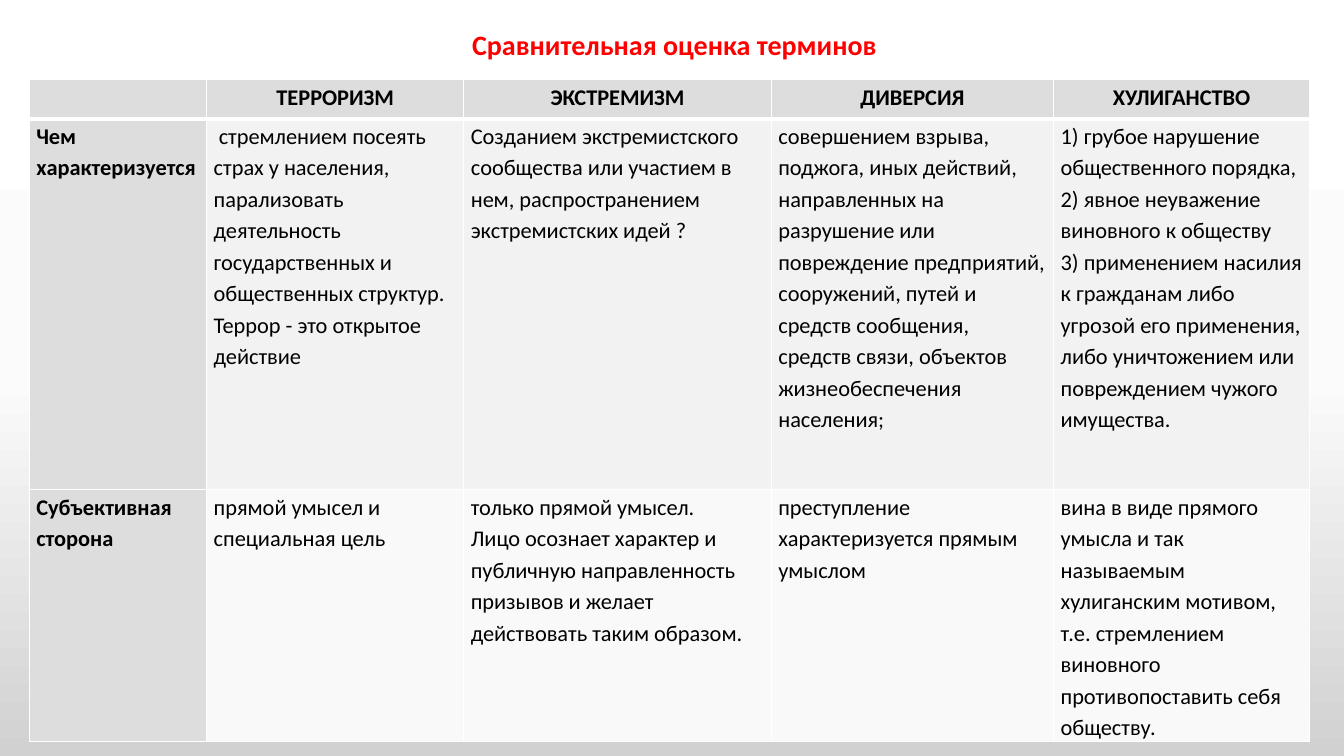
import copy

import pptx
import pptx.dml.color
import pptx.enum.text
import pptx.oxml
import pptx.oxml.ns
import pptx.util
from pptx.util import Inches

FONT = "Calibri"
LEFT, CENTER = pptx.enum.text.PP_ALIGN.LEFT, pptx.enum.text.PP_ALIGN.CENTER

COLUMN_WIDTHS = [1.76, 2.55, 3.05, 2.8, 2.54]
ROW_HEIGHTS = [0.39, 3.68, 2.5]
HEADING_FILL = "DDDDDD"
ROW_FILLS = [HEADING_FILL, "F2F2F2", "F9F9F9"]

# Each line of a cell is a paragraph
TERMS = [
    ["", "ТЕРРОРИЗМ", "ЭКСТРЕМИЗМ", "ДИВЕРСИЯ", "ХУЛИГАНСТВО"],
    [
        "Чем характеризуется",
        " стремлением посеять страх у населения, парализовать деятельность "
        "государственных и общественных структур. Террор - это открытое действие",
        "Созданием экстремистского сообщества или участием в нем, "
        "распространением экстремистских идей ?",
        "совершением взрыва, поджога, иных действий, направленных на разрушение "
        "или повреждение предприятий, сооружений, путей и средств сообщения, "
        "средств связи, объектов жизнеобеспечения населения;",
        "1) грубое нарушение общественного порядка,\n"
        "2) явное неуважение виновного к обществу\n"
        "3) применением насилия к гражданам либо угрозой его применения, "
        "либо уничтожением или повреждением чужого имущества.",
    ],
    [
        "Субъективная сторона",
        "прямой умысел и специальная цель",
        "только прямой умысел.\n"
        "Лицо осознает характер и публичную направленность призывов "
        "и желает действовать таким образом.",
        "преступление характеризуется прямым умыслом",
        "вина в виде прямого умысла и так называемым хулиганским мотивом, "
        "т.е. стремлением виновного противопоставить себя обществу.",
    ],
]


def color(hex_string):
    return pptx.dml.color.RGBColor.from_string(hex_string)


def write_text(text_frame, text, size, hex_color, bold, alignment, spacing):
    text_frame.text = text
    for paragraph in text_frame.paragraphs:
        paragraph.alignment = alignment
        paragraph.line_spacing = spacing
        for run in paragraph.runs:
            run.font.name = FONT
            run.font.size = pptx.util.Pt(size)
            run.font.bold = bold
            run.font.color.rgb = color(hex_color)


def set_background(slide, hex_colors):
    fill = slide.background.fill
    fill.gradient()
    fill.gradient_angle = 270
    # The default gradient has two stops; add the middle one
    stop_list = slide.element.xpath(".//a:gsLst")[0]
    stop_list.insert(1, copy.deepcopy(stop_list[0]))
    last = len(hex_colors) - 1
    for index, stop in enumerate(fill.gradient_stops):
        stop.position = index / last
        stop.color.rgb = color(hex_colors[index])


def add_title(slide, text):
    box = slide.shapes.add_textbox(Inches(0.94), Inches(0.12), Inches(11.5), Inches(0.68))
    box.text_frame.word_wrap = True
    box.text_frame.vertical_anchor = pptx.enum.text.MSO_ANCHOR.MIDDLE
    write_text(box.text_frame, text, 20, "FF0000", True, CENTER, 0.9)


def set_borders(cell, bottom):
    properties = cell._tc.get_or_add_tcPr()
    for side, points in (("L", 1), ("R", 1), ("T", 1), ("B", bottom)):
        properties.append(pptx.oxml.parse_xml(
            f'<a:ln{side} {pptx.oxml.ns.nsdecls("a")} w="{pptx.util.Pt(points)}">'
            f'<a:solidFill><a:srgbClr val="FFFFFF"/></a:solidFill></a:ln{side}>'))


def format_cell(cell, row, column, text):
    heading = row == 0 or column == 0
    cell.margin_left = cell.margin_right = Inches(0.07)
    cell.margin_top = cell.margin_bottom = 0
    set_borders(cell, bottom=3 if row == 0 else 1)
    cell.fill.solid()
    cell.fill.fore_color.rgb = color(HEADING_FILL if heading else ROW_FILLS[row])
    write_text(cell.text_frame, text, 16, "000000", heading,
               CENTER if row == 0 else LEFT, 1.15)


def add_comparison_table(slide):
    frame = slide.shapes.add_table(
        len(ROW_HEIGHTS), len(COLUMN_WIDTHS), Inches(0.29), Inches(0.79),
        Inches(sum(COLUMN_WIDTHS)), Inches(sum(ROW_HEIGHTS)))
    table = frame.table
    for column, width in zip(table.columns, COLUMN_WIDTHS):
        column.width = Inches(width)
    for row, height in zip(table.rows, ROW_HEIGHTS):
        row.height = Inches(height)
    for row, texts in enumerate(TERMS):
        for column, text in enumerate(texts):
            format_cell(table.cell(row, column), row, column, text)


def main():
    presentation = pptx.Presentation()
    presentation.slide_width = Inches(13.33)
    presentation.slide_height = Inches(7.5)
    slide = presentation.slides.add_slide(presentation.slide_layouts[6])

    set_background(slide, ["FFFFFF", "FBFBFB", "D1D1D1"])
    add_title(slide, "Сравнительная оценка терминов")
    add_comparison_table(slide)

    presentation.save("out.pptx")


if __name__ == "__main__":
    main()
